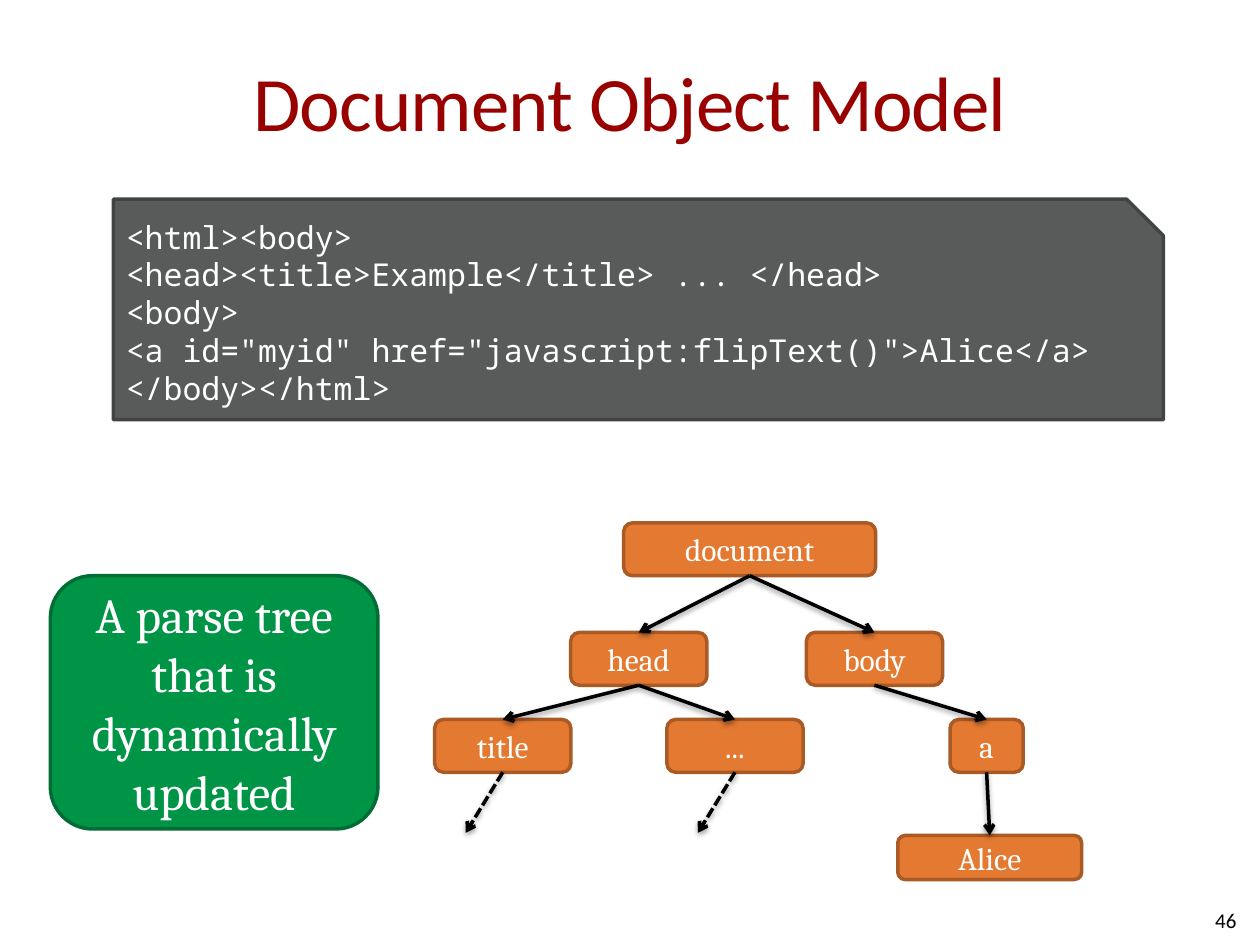
from lxml.etree import SubElement
from pptx import Presentation
from pptx.dml.color import RGBColor
from pptx.enum.dml import MSO_LINE_DASH_STYLE as Dash
from pptx.enum.shapes import MSO_CONNECTOR as Connector, MSO_SHAPE as Shape
from pptx.enum.text import MSO_ANCHOR as Anchor, PP_ALIGN as Align
from pptx.oxml.ns import qn
from pptx.util import Pt

COLOURS = {
    "title": "990000", "ink": "000000", "paper": "FFFFFF",
    "node": "E47932", "node_edge": "A95A25",
    "note": "009446", "note_edge": "006D34",
    "code": "595A5A", "code_edge": "424343",
}
SHADOW = {"blurRad": Pt(3.1), "dist": Pt(1.6), "dir": 5400000, "rotWithShape": 0}


def colour(key):
    return RGBColor.from_string(COLOURS[key])


class TreeSlide:
    line_width = Pt(2)

    def __init__(self, deck):
        self.slide = deck.slides.add_slide(deck.slide_layouts[6])
        self.shapes = self.slide.shapes

    def set_text(self, shape, text, font, size, ink, align=Align.CENTER,
                 spacing=None, tracking=None, **frame_format):
        frame = shape.text_frame
        frame_format = {"word_wrap": True, "vertical_anchor": Anchor.MIDDLE, **frame_format}
        for attribute, value in frame_format.items():
            setattr(frame, attribute, value)
        frame.text = text
        for paragraph in frame.paragraphs:
            paragraph.alignment = align
            paragraph.line_spacing = spacing
            for run in paragraph.runs:
                run.font.name = font
                run.font.size = Pt(size)
                run.font.color.rgb = colour(ink)
                if tracking:
                    run.font._element.set("spc", str(tracking))

    def label(self, box, text, size, ink, **text_format):
        area = self.shapes.add_textbox(*map(Pt, box))
        self.set_text(area, text, "Calibri", size, ink, **text_format)

    def block(self, box, text, kind, size=18, outline=Shape.ROUNDED_RECTANGLE,
              font="Cambria", **text_format):
        block = self.shapes.add_shape(outline, *map(Pt, box))
        block.shadow.inherit = False
        block.fill.solid()
        block.fill.fore_color.rgb = colour(kind)
        block.line.color.rgb = colour(kind + "_edge")
        block.line.width = self.line_width
        self.set_text(block, text, font, size, "paper", **text_format)
        return block

    def arrow(self, parent, child=None, drop=(0, 0), dash=None):
        x, y = parent.left + parent.width // 2, parent.top + parent.height
        arrow = self.shapes.add_connector(
            Connector.STRAIGHT, x, y, x + Pt(drop[0]), y + Pt(drop[1]))
        arrow.begin_connect(parent, 2)
        if child is not None:
            arrow.end_connect(child, 0)
        arrow.line.color.rgb = colour("ink")
        arrow.line.width = self.line_width
        if dash:
            arrow.line.dash_style = dash
        SubElement(arrow.line._get_or_add_ln(), qn("a:tailEnd"), type="arrow")
        effects = SubElement(arrow._element.spPr, qn("a:effectLst"))
        shadow = SubElement(effects, qn("a:outerShdw"),
                            {key: str(int(value)) for key, value in SHADOW.items()})
        tint = SubElement(shadow, qn("a:srgbClr"), val=COLOURS["ink"])
        SubElement(tint, qn("a:alpha"), val="38000")


def main():
    deck = Presentation()
    deck.slide_width, deck.slide_height = Pt(720), Pt(540)
    page = TreeSlide(deck)

    page.label((36, 12.24, 648, 90), "Document Object Model", 44, "title",
               tracking=-50, margin_left=0, margin_right=0)
    page.label((545.8, 511.2, 167.8, 28.8), "46", 12, "ink", align=Align.RIGHT)

    markup = "\n".join([
        "<html><body>",
        "<head><title>Example</title> ... </head>",
        "<body>",
        '<a id="myid" href="javascript:flipText()">Alice</a>',
        "</body></html>",
    ])
    page.block((64.8, 113.8, 600, 126), markup, "code", outline=Shape.SNIP_1_RECTANGLE,
               font="Noto Sans Mono", align=Align.LEFT, spacing=Pt(21.6),
               vertical_anchor=Anchor.TOP, margin_top=0)
    page.block((28.8, 329, 187.2, 144.7), "A parse tree that is dynamically updated",
               "note", size=28)

    rows = [(298.8, 30.2), (361.4, 30.2), (411.1, 30.2), (477.4, 25.2)]
    tree = {
        "document": (0, 428.4, 144),
        "head": (1, 365, 77.8),
        "body": (1, 499.7, 77.8),
        "title": (2, 287.3, 77.8),
        "...": (2, 420, 77.8),
        "a": (2, 563.8, 41.8),
        "Alice": (3, 565.6, 105.1),
    }
    nodes = {}
    for name, (row, centre, width) in tree.items():
        top, height = rows[row]
        nodes[name] = page.block((centre - width / 2, top, width, height), name, "node")

    branches = {"document": ["head", "body"], "head": ["title", "..."],
                "body": ["a"], "a": ["Alice"]}
    for parent, children in branches.items():
        for child in children:
            page.arrow(nodes[parent], nodes[child])
    for parent in ("title", "..."):
        page.arrow(nodes[parent], drop=(-21.2, 34.6), dash=Dash.SQUARE_DOT)

    deck.save("out.pptx")


if __name__ == "__main__":
    main()
